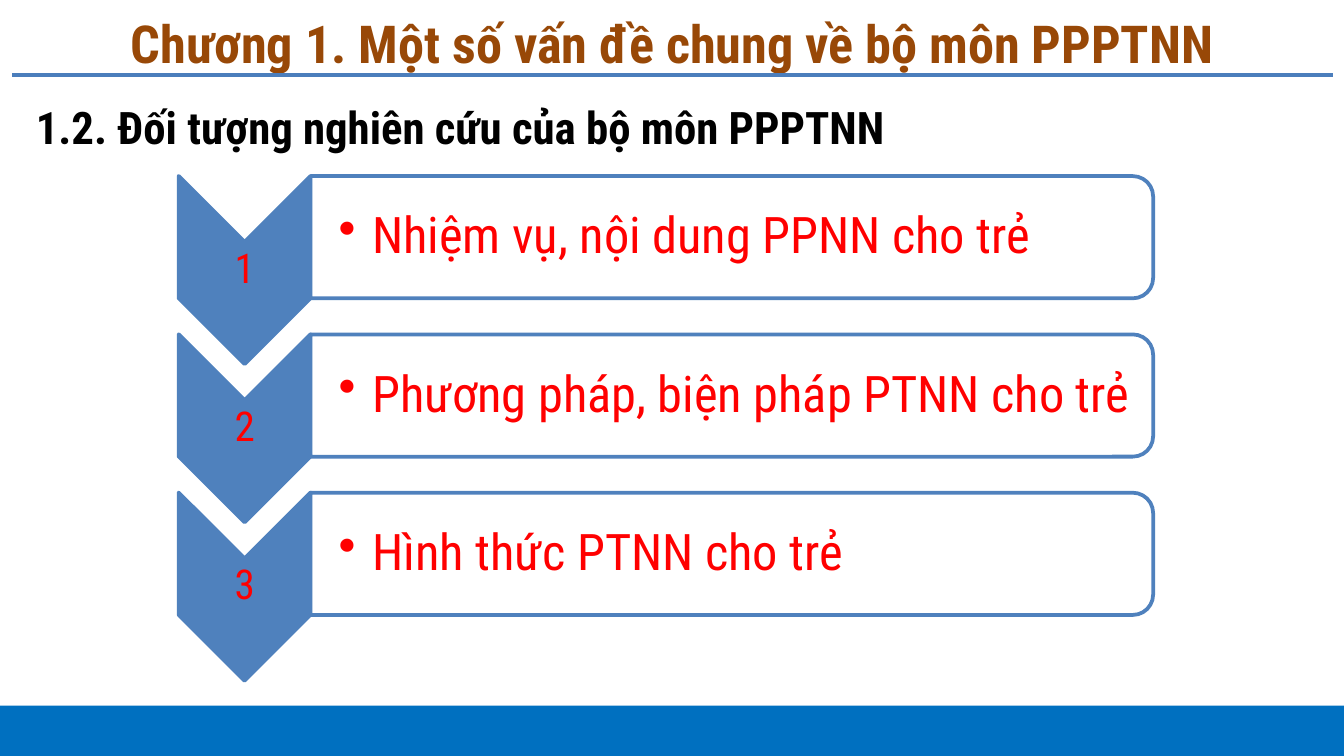
from dataclasses import dataclass

from lxml import etree
from pptx import Presentation
from pptx import util as u
from pptx.dml.color import RGBColor
from pptx.enum import shapes, text
from pptx.oxml.ns import qn


@dataclass(frozen=True)
class Theme:
    font: str = "Roboto Condensed"
    heading: str = "984807"
    ink: str = "000000"
    topic: str = "FF0000"
    accent: str = "4F81BD"
    rule: str = "4B7EBC"
    footer: str = "0070C0"
    panel: str = "FFFFFF"
    heading_size: float = 28
    section_size: float = 24
    topic_size: float = 27
    number_size: float = 22
    line_width: float = 2


@dataclass(frozen=True)
class Box:
    left: float
    top: float
    width: float
    height: float

    def lengths(self) -> list:
        return [u.Pt(v) for v in (self.left, self.top, self.width, self.height)]

    def moved_down(self, distance: float) -> "Box":
        return Box(self.left, self.top + distance, self.width, self.height)


@dataclass(frozen=True)
class Topic:
    number: str
    wording: str


THEME = Theme()
TOPICS = [
    Topic("1", "Nhiệm vụ, nội dung PPNN cho trẻ"),
    Topic("2", "Phương pháp, biện pháp PTNN cho trẻ"),
    Topic("3", "Hình thức PTNN cho trẻ"),
]
ROW_PITCH = 84.8
CHEVRON = Box(80.6, 109.4, 100.8, 70.6)
NUMBER = Box(95.8, 129.6, 70.6, 30.2)
PANEL = Box(359.3, -98.6, 65.5, 451.4)
WORDING = Box(166.3, 97.7, 448.6, 59)


def colour(value: str) -> RGBColor:
    return RGBColor.from_string(value)


def write(frame, wording: str, size: float, ink: str, align, bold: bool = False):
    frame.text = wording
    frame.word_wrap = True
    frame.auto_size = text.MSO_AUTO_SIZE.NONE
    paragraph = frame.paragraphs[0]
    paragraph.alignment = align
    font = paragraph.runs[0].font
    font.name, font.size, font.bold = THEME.font, u.Pt(size), bold
    font.color.rgb = colour(ink)
    return paragraph


def set_bullet(paragraph, mark: str = "", indent: float = 0) -> None:
    """Give the paragraph a hanging bullet, or none when mark is empty."""
    properties = paragraph._p.get_or_add_pPr()
    properties.set("marL", str(u.Pt(indent)))
    properties.set("indent", str(u.Pt(-indent)))
    if mark:
        etree.SubElement(properties, qn("a:buChar")).set("char", mark)
    else:
        etree.SubElement(properties, qn("a:buNone"))


def add_turned_shape(slide, preset, box: Box, fill: str):
    """Add an outlined shape turned a quarter clockwise."""
    shape = slide.shapes.add_shape(preset, *box.lengths())
    shape.rotation = 90
    shape.shadow.inherit = False
    shape.fill.solid()
    shape.fill.fore_color.rgb = colour(fill)
    shape.line.color.rgb = colour(THEME.accent)
    shape.line.width = u.Pt(THEME.line_width)
    return shape


def add_label(slide, box: Box, wording: str, size: float, align, left_inset: float):
    frame = slide.shapes.add_textbox(*box.lengths()).text_frame
    frame.margin_top = frame.margin_right = frame.margin_bottom = u.Pt(1.4)
    frame.margin_left = u.Pt(left_inset)
    frame.vertical_anchor = text.MSO_ANCHOR.MIDDLE
    paragraph = write(frame, wording, size, THEME.topic, align)
    paragraph.line_spacing = 0.9
    return paragraph


def add_topic(slide, topic: Topic, offset: float) -> None:
    preset = shapes.MSO_SHAPE
    add_turned_shape(slide, preset.CHEVRON, CHEVRON.moved_down(offset), THEME.accent)
    add_label(slide, NUMBER.moved_down(offset), topic.number,
              THEME.number_size, text.PP_ALIGN.CENTER, 1.4)
    panel = add_turned_shape(slide, preset.ROUND_2_SAME_RECTANGLE,
                             PANEL.moved_down(offset), THEME.panel)
    panel_colour = panel.fill._xPr.find(qn("a:solidFill"))[0]
    etree.SubElement(panel_colour, qn("a:alpha")).set("val", "90000")
    wording = add_label(slide, WORDING.moved_down(offset), topic.wording,
                        THEME.topic_size, text.PP_ALIGN.LEFT, 15.1)
    set_bullet(wording, "•", 18)


def add_frame(slide) -> None:
    """Add the footer band and the rule under the heading."""
    footer = slide.shapes.add_shape(shapes.MSO_SHAPE.RECTANGLE,
                                    *Box(-3, 378, 726, 27).lengths())
    footer.shadow.inherit = False
    footer.fill.solid()
    footer.fill.fore_color.rgb = colour(THEME.footer)
    footer.line.fill.background()
    rule = slide.shapes.add_connector(shapes.MSO_CONNECTOR.STRAIGHT,
                                      u.Pt(6.7), u.Pt(40.3), u.Pt(714), u.Pt(40.3))
    rule.line.color.rgb = colour(THEME.rule)
    rule.line.width = u.Pt(THEME.line_width)
    etree.SubElement(rule._element.spPr, qn("a:effectLst"))


def fill_placeholders(slide) -> None:
    heading, section = slide.placeholders
    for placeholder, box in ((heading, Box(12, 4.3, 696, 36.7)),
                             (section, Box(12, 46.8, 696, 320.4))):
        placeholder.left, placeholder.top, placeholder.width, placeholder.height = box.lengths()
    heading.text_frame.vertical_anchor = text.MSO_ANCHOR.MIDDLE
    write(heading.text_frame, "Chương 1. Một số vấn đề chung về bộ môn PPPTNN",
          THEME.heading_size, THEME.heading, text.PP_ALIGN.CENTER, True)
    line = write(section.text_frame, "1.2. Đối tượng nghiên cứu của bộ môn PPPTNN",
                 THEME.section_size, THEME.ink, text.PP_ALIGN.JUSTIFY, True)
    line.line_spacing = 1.1
    line.space_before = u.Pt(6)
    set_bullet(line)


def main() -> None:
    deck = Presentation()
    deck.slide_width, deck.slide_height = u.Pt(720), u.Pt(405)
    slide = deck.slides.add_slide(deck.slide_layouts[1])
    fill_placeholders(slide)
    add_frame(slide)
    for row, topic in enumerate(TOPICS):
        add_topic(slide, topic, row * ROW_PITCH)
    deck.save("out.pptx")


if __name__ == "__main__":
    main()
